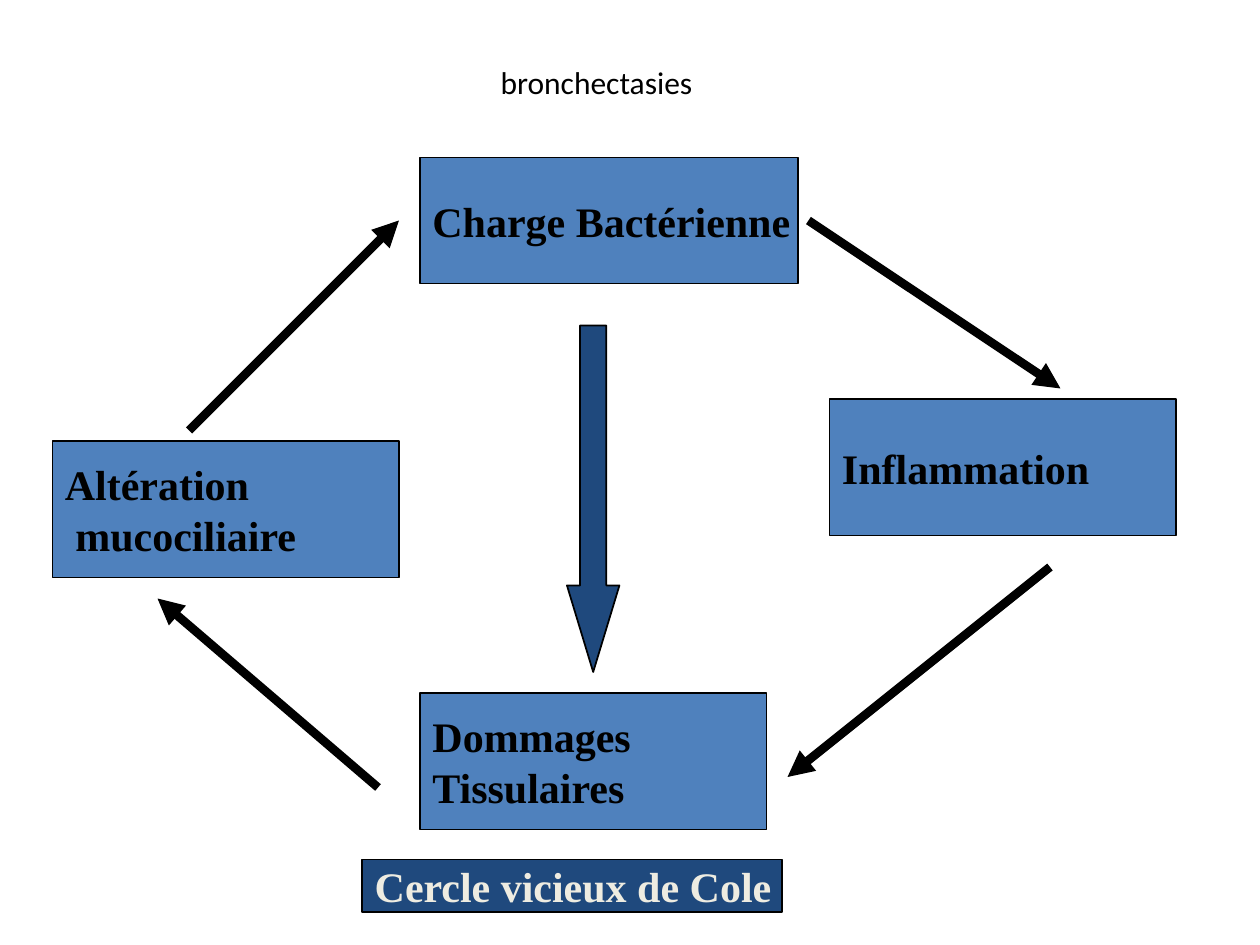
from lxml import etree
from pptx import Presentation
from pptx.dml.color import RGBColor
from pptx.enum.shapes import MSO_CONNECTOR, MSO_SHAPE
from pptx.enum.text import MSO_ANCHOR, PP_ALIGN
from pptx.oxml.ns import qn
from pptx.util import Pt

PX = 9525
BLACK = RGBColor(0x00, 0x00, 0x00)
BLUE = RGBColor(0x4F, 0x81, 0xBD)
NAVY = RGBColor(0x1F, 0x49, 0x7D)
CREAM = RGBColor(0xEE, 0xEC, 0xE1)
PROCESS = MSO_SHAPE.FLOWCHART_PROCESS
RECTANGLE = MSO_SHAPE.RECTANGLE
DOWN_ARROW = MSO_SHAPE.DOWN_ARROW
STRAIGHT = MSO_CONNECTOR.STRAIGHT
LEFT, CENTER = PP_ALIGN.LEFT, PP_ALIGN.CENTER
TOP, MIDDLE = MSO_ANCHOR.TOP, MSO_ANCHOR.MIDDLE

LABEL_FONT = {"name": "Times New Roman", "size": Pt(24), "bold": True}
TITLE_FONT = {"name": "Calibri", "size": Pt(18), "bold": False}

STAGES = [
    ("Charge Bactérienne", (320, 120, 288, 96)),
    ("Inflammation", (632, 304, 264, 104)),
    ("Dommages\nTissulaires", (320, 528, 264, 104)),
    ("Altération\n mucociliaire", (40, 336, 264, 104)),
]
CYCLE_ARROWS = [
    (616, 168, 808, 296),
    (800, 432, 600, 592),
    (288, 600, 120, 456),
    (144, 328, 304, 168),
]


def px(*lengths):
    """Turn pixel lengths into EMU."""
    return [length * PX for length in lengths]


def set_format(target, values):
    """Set each attribute of the target from a dict."""
    for name, value in values.items():
        setattr(target, name, value)


def write_text(shape, text, font, color, align, frame_format):
    """Write formatted text, one paragraph for each line."""
    frame = shape.text_frame
    set_format(frame, frame_format)
    frame.text = text
    for para in frame.paragraphs:
        para.alignment = align
        for span in para.runs:
            set_format(span.font, font)
            span.font.color.rgb = color


def add_title(slide, text, area):
    """Place and format the title placeholder."""
    title = slide.shapes.title
    set_format(title, dict(zip(("left", "top", "width", "height"), px(*area))))
    write_text(title, text, TITLE_FONT, BLACK, CENTER,
               {"word_wrap": True, "vertical_anchor": TOP})


def add_block(slide, kind, area, fill):
    """Add a filled shape with a thin black outline."""
    block = slide.shapes.add_shape(kind, *px(*area))
    block.shadow.inherit = False
    block.fill.solid()
    block.fill.fore_color.rgb = fill
    block.line.color.rgb = BLACK
    block.line.width = Pt(1)
    return block


def add_label_box(slide, kind, text, area, fill, color):
    """Add a block with a bold left-aligned label."""
    box = add_block(slide, kind, area, fill)
    write_text(box, text, LABEL_FONT, color, LEFT,
               {"word_wrap": False, "vertical_anchor": MIDDLE})


def add_cycle_arrow(slide, ends):
    """Add a thick straight arrow between two points."""
    arrow = slide.shapes.add_connector(STRAIGHT, *px(*ends))
    arrow.line.color.rgb = BLACK
    arrow.line.width = Pt(5)
    etree.SubElement(arrow.line._get_or_add_ln(), qn("a:tailEnd"), type="triangle")
    etree.SubElement(arrow._element.spPr, qn("a:effectLst"))


def main():
    """Build the vicious circle slide."""
    deck = Presentation()
    deck.slide_width, deck.slide_height = px(960, 720)
    slide = deck.slides.add_slide(deck.slide_layouts[5])
    add_title(slide, "bronchectasies", (204, 43, 501, 38))
    for text, area in STAGES:
        add_label_box(slide, PROCESS, text, area, BLUE, BLACK)
    down_arrow = add_block(slide, DOWN_ARROW, (432, 248, 40, 264), NAVY)
    down_arrow.adjustments[0] = 0.5
    down_arrow.adjustments[1] = 1.65
    for ends in CYCLE_ARROWS:
        add_cycle_arrow(slide, ends)
    add_label_box(slide, RECTANGLE, "Cercle vicieux de Cole",
                  (276, 655, 320, 40), NAVY, CREAM)
    deck.save("out.pptx")


if __name__ == "__main__":
    main()
